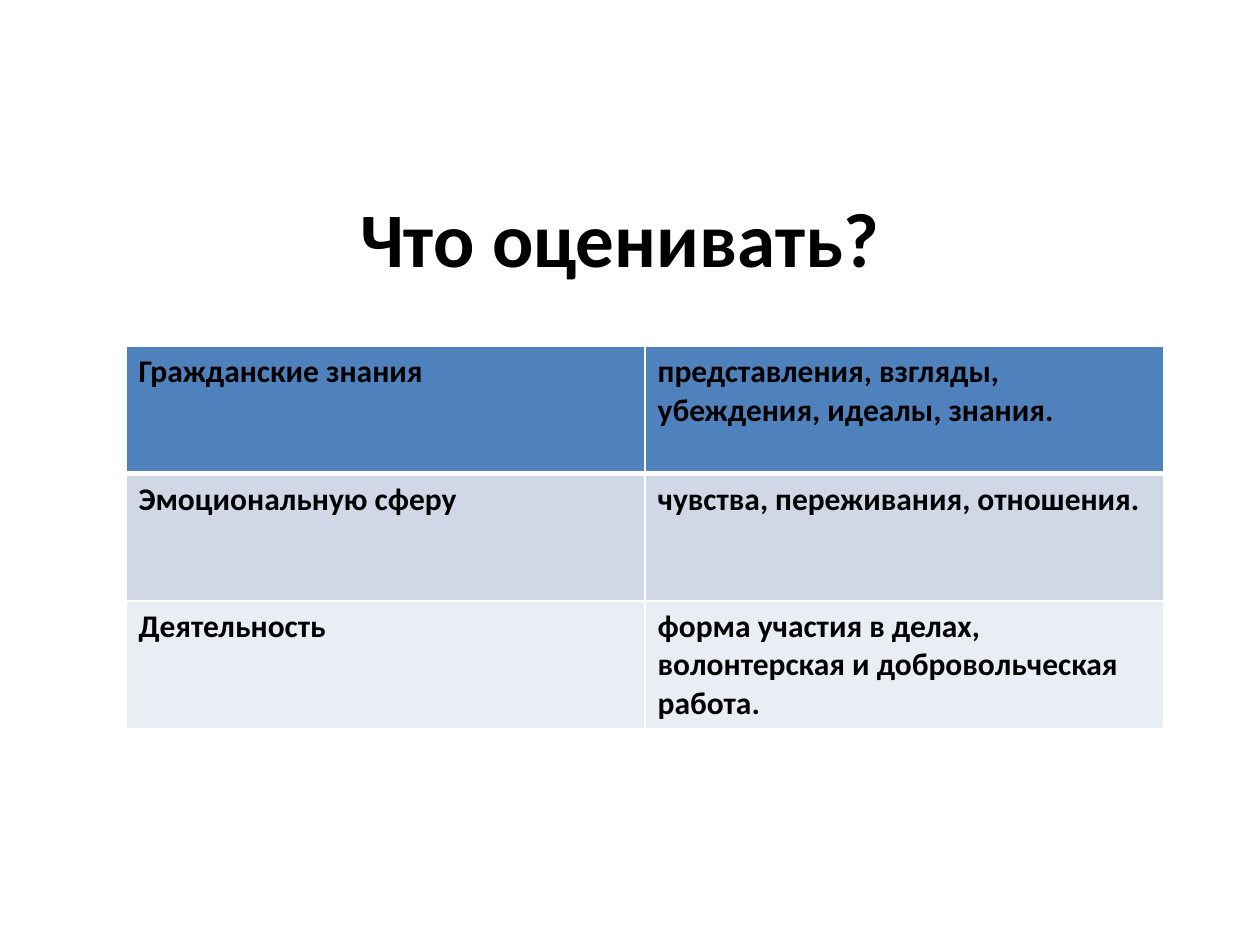
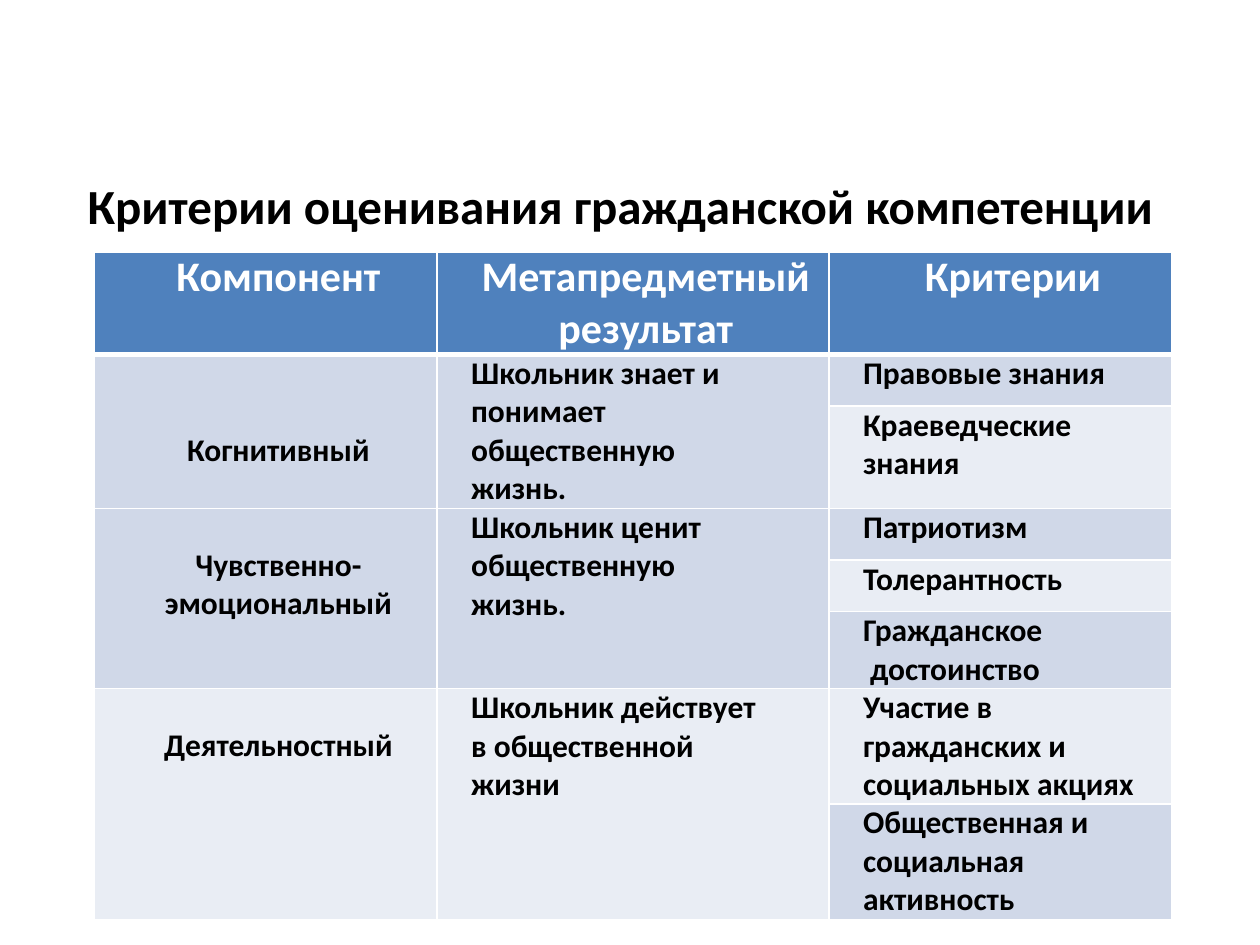
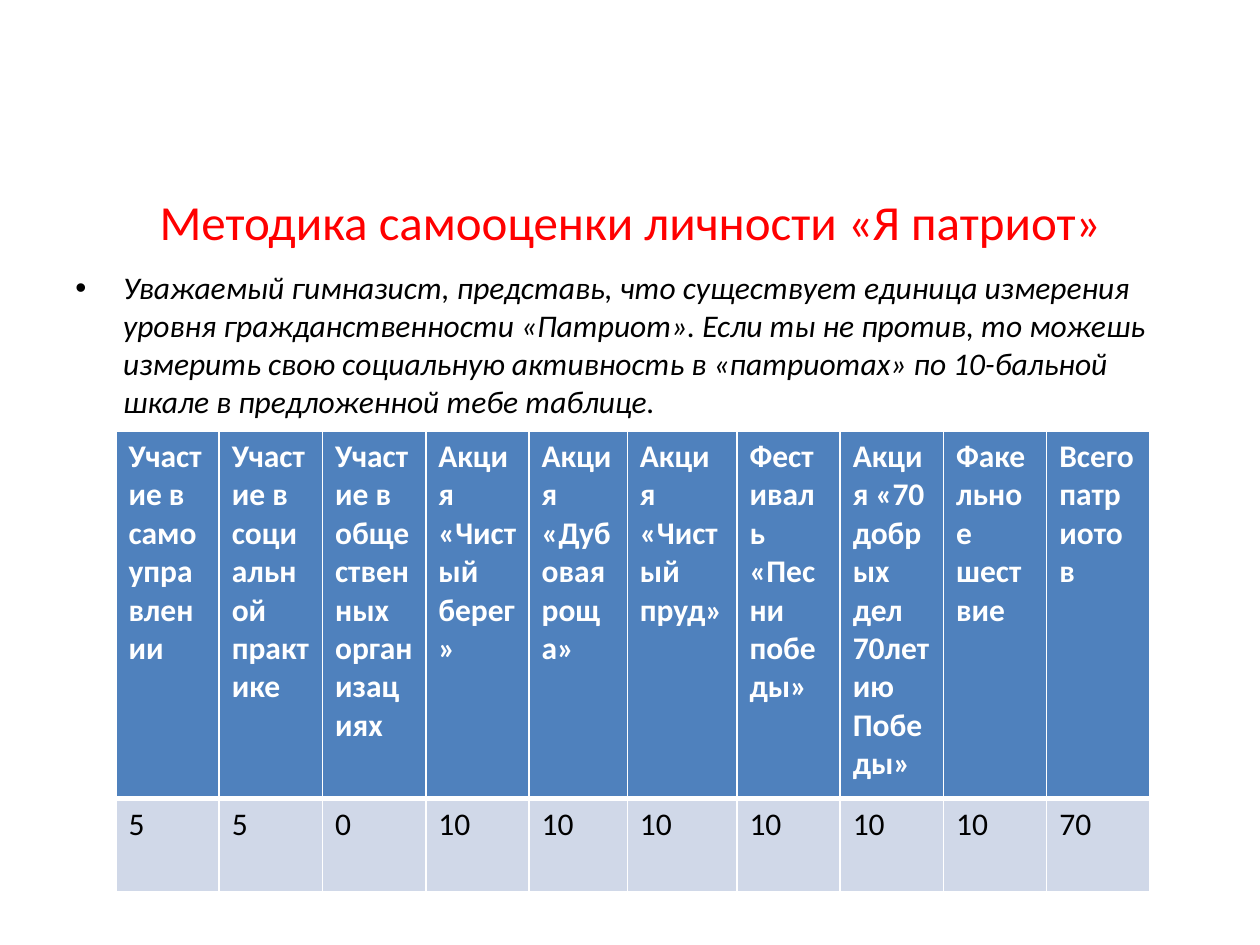
from pptx import Presentation
from pptx.dml.color import RGBColor
from pptx.enum.text import MSO_ANCHOR, PP_ALIGN
from pptx.oxml.ns import qn
from pptx.util import Inches, Pt
from lxml.etree import SubElement

FONT = "Calibri"
BLACK = RGBColor(0x00, 0x00, 0x00)
WHITE = RGBColor(0xFF, 0xFF, 0xFF)
RED = RGBColor(0xFF, 0x00, 0x00)
BLUE = RGBColor(0x4F, 0x81, 0xBD)
DARK = RGBColor(0xD0, 0xD8, 0xE8)
PALE = RGBColor(0xE9, 0xED, 0xF4)

AREAS = [
    ["Гражданские знания", "представления, взгляды, убеждения, идеалы, знания."],
    ["Эмоциональную сферу", "чувства, переживания, отношения."],
    ["Деятельность", "форма участия в делах, волонтерская и добровольческая работа."],
]
HEADS = ["Компонент", "Метапредметный результат", "Критерии"]
PARTS = [
    ("Когнитивный", 0.61, "Школьник знает и понимает\nобщественную\nжизнь.",
     ["Правовые знания", "Краеведческие\nзнания"]),
    ("Чувственно-эмоциональный", 0.3, "Школьник ценит общественную\nжизнь.",
     ["Патриотизм", "Толерантность", "Гражданское\n достоинство"]),
    ("Деятельностный", 0.3, "Школьник действует\nв общественной\nжизни",
     ["Участие в гражданских и социальных акциях",
      "Общественная и социальная\nактивность"]),
]
SCORES = [
    ("Участие в самоуправлении", 5),
    ("Участие в социальной практике", 5),
    ("Участие в общественных организациях", 0),
    ("Акция «Чистый берег»", 10),
    ("Акция «Дубовая роща»", 10),
    ("Акция «Чистый пруд»", 10),
    ("Фестиваль «Песни победы»", 10),
    ("Акция «70 добрых дел 70летию Победы»", 10),
    ("Факельное шествие", 10),
    ("Всего патриотов", 70),
]
CALL = ("Уважаемый гимназист, представь, что существует единица измерения "
        "уровня гражданственности «Патриот». Если ты не против, то можешь "
        "измерить свою социальную активность в «патриотах» по 10-бальной "
        "шкале в предложенной тебе таблице.")


def paint(frame, size, color, bold=False, italic=False, align=PP_ALIGN.LEFT):
    """Format every run of a text frame."""
    for para in frame.paragraphs:
        para.alignment = align
        for run in para.runs:
            font = run.font
            font.name, font.size = FONT, Pt(size)
            font.bold, font.italic = bold, italic
            font.color.rgb = color


def start(deck, text, box, size, color=BLACK, bold=True):
    """Add a slide with its title placed in the box."""
    slide = deck.slides.add_slide(deck.slide_layouts[5])
    title = slide.shapes.title
    title.left, title.top, title.width, title.height = map(Inches, box)
    frame = title.text_frame
    frame.text = text
    frame.word_wrap = True
    frame.vertical_anchor = MSO_ANCHOR.MIDDLE
    paint(frame, size, color, bold, align=PP_ALIGN.CENTER)
    return slide


def edge(cell, row):
    """Draw white cell borders, thick under the head row."""
    props = cell._tc.get_or_add_tcPr()
    wide = {("lnB", 0), ("lnT", 1)}
    for tag in ("lnL", "lnR", "lnT", "lnB"):
        width = Pt(3 if (tag, row) in wide else 1)
        line = SubElement(props, qn("a:" + tag), w=str(width))
        fill = SubElement(line, qn("a:solidFill"))
        SubElement(fill, qn("a:srgbClr"), val=str(WHITE))


def grid(slide, left, top, cols, rows, texts, head=WHITE, bold=True):
    """Add a banded table filled with the texts."""
    table = slide.shapes.add_table(
        len(rows), len(cols), Inches(left), Inches(top),
        Inches(sum(cols)), Inches(sum(rows))).table
    table.horz_banding = table.first_row = False
    for col, width in zip(table.columns, cols):
        col.width = Inches(width)
    for num, (row, height) in enumerate(zip(table.rows, rows)):
        row.height = Inches(height)
        for cell, text in zip(row.cells, texts[num]):
            cell.text_frame.text = text
            edge(cell, num)
            cell.fill.solid()
            cell.fill.fore_color.rgb = (DARK if num % 2 else PALE) if num else BLUE
            paint(cell.text_frame, 18, BLACK if num else head, bold or not num)
    return table


def inset(cell, top=0):
    """Set narrow margins and indent the paragraphs of a cell."""
    cell.margin_left = cell.margin_right = Inches(0.07)
    cell.margin_top, cell.margin_bottom = Inches(top), 0
    for para in cell.text_frame.paragraphs:
        props = para._p.get_or_add_pPr()
        props.set("marL", str(Inches(0.2)))
        props.set("indent", "0")


def areas(deck):
    """Build the slide on what to assess."""
    slide = start(deck, "Что оценивать?", (0.42, 1.25, 9, 1.25), 44)
    grid(slide, 1, 2.75, [4.12] * 2, [1.01] * 3, AREAS, BLACK)


def criteria(deck):
    """Build the slide of criteria with merged groups."""
    slide = start(deck, "Критерии оценивания гражданской компетенции",
                  (0.42, 1, 9, 1.25), 28)
    texts = [HEADS]
    for name, _, result, items in PARTS:
        texts.append([name, result, items[0]])
        texts += [["", "", item] for item in items[1:]]
    rows = [0.81, 0.41, 0.81, 0.41, 0.41, 0.61, 0.91, 0.91]
    table = grid(slide, 0.75, 2, [2.72, 3.11, 2.72], rows, texts)
    for cell in table.iter_cells():
        inset(cell)
    for cell in table.rows[0].cells:
        paint(cell.text_frame, 24, WHITE, True, align=PP_ALIGN.CENTER)
    first = 1
    for _, gap, _, items in PARTS:
        last = first + len(items) - 1
        name = table.cell(first, 0)
        inset(name, gap)
        paint(name.text_frame, 18, BLACK, True, align=PP_ALIGN.CENTER)
        for col in (0, 1):
            table.cell(first, col).merge(table.cell(last, col))
        first = last + 1


def appeal(slide, box):
    """Add the bulleted appeal in the box."""
    frame = slide.shapes.add_textbox(*map(Inches, box)).text_frame
    frame.word_wrap = True
    frame.text = CALL
    props = frame.paragraphs[0]._p.get_or_add_pPr()
    props.set("marL", str(Inches(0.38)))
    props.set("indent", str(-Inches(0.38)))
    SubElement(props, qn("a:buFont"), typeface="Arial")
    SubElement(props, qn("a:buChar"), char="•")
    paint(frame, 18, BLACK, italic=True)


def survey(deck):
    """Build the slide of the self-assessment survey."""
    slide = start(deck, "Методика самооценки личности «Я патриот»",
                  (0.5, 1.5, 9, 0.5), 28, RED, False)
    appeal(slide, (0.5, 2.08, 9, 4.62))
    cols = [0.82] * 4 + [0.78, 0.87] + [0.82] * 4
    names, marks = zip(*SCORES)
    grid(slide, 0.92, 3.42, cols, [2.92, 0.74],
         [names, [str(mark) for mark in marks]], bold=False)


def main():
    """Build and save the deck."""
    deck = Presentation()
    deck.slide_width, deck.slide_height = Inches(10), Inches(7.5)
    areas(deck)
    criteria(deck)
    survey(deck)
    deck.save("out.pptx")


if __name__ == "__main__":
    main()
